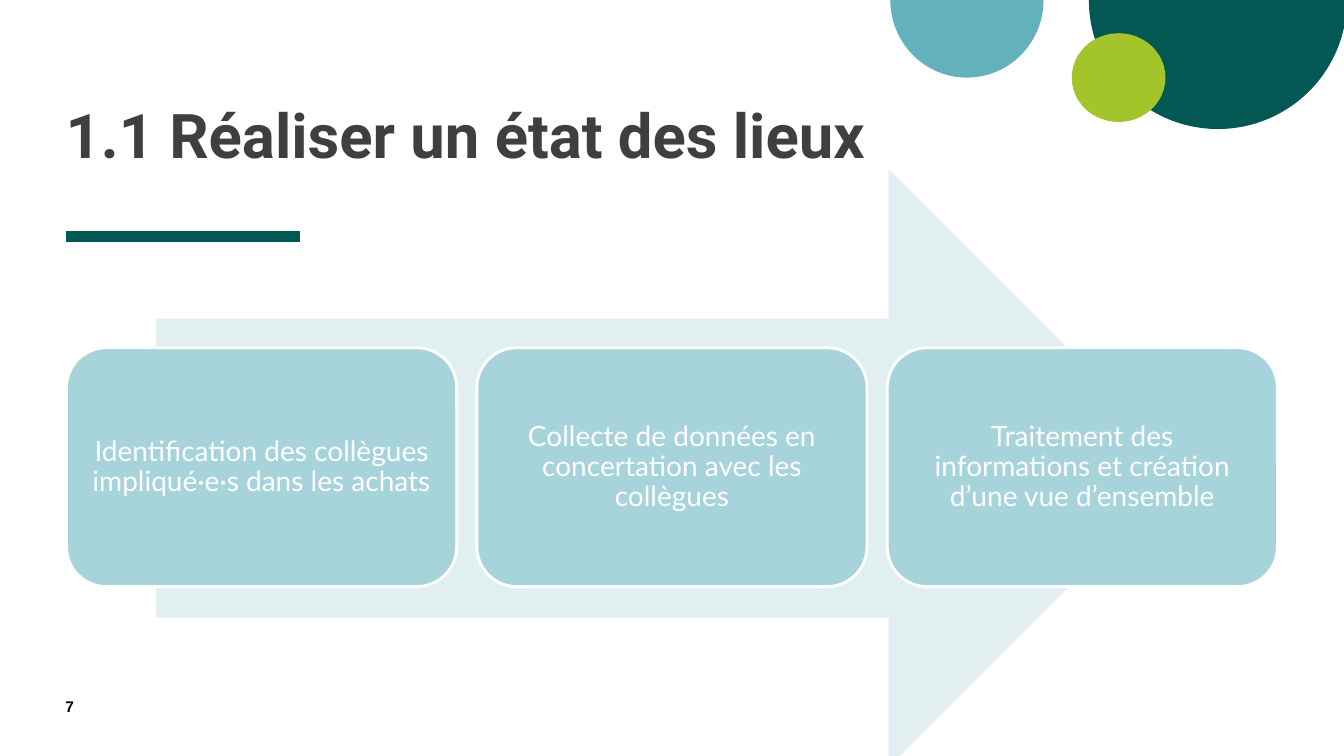
import dataclasses

import lxml.etree
import pptx
import pptx.dml.color
import pptx.enum.shapes
import pptx.enum.text
import pptx.oxml.ns
import pptx.shapes.autoshape
import pptx.slide
import pptx.text.text
import pptx.util

Inches = pptx.util.Inches
Kind = pptx.enum.shapes.MSO_SHAPE
Align = pptx.enum.text.PP_ALIGN
Anchor = pptx.enum.text.MSO_ANCHOR

COLOURS = {
    "green": "035854",
    "blue": "64B1BE",
    "lime": "A3C42A",
    "arrow": "E1EFF1",
    "card": "A7D3DA",
    "title": "3F3F3F",
    "black": "000000",
    "white": "FFFFFF",
}

STEPS = [
    "Identification des collègues impliqué·e·s dans les achats",
    "Collecte de données en concertation avec les collègues",
    "Traitement des informations et création d’une vue d’ensemble",
]
PITCH = 4.07


@dataclasses.dataclass
class Form:
    kind: Kind
    left: float
    top: float
    width: float
    height: float
    fill: str
    adjust: tuple[float, ...] = ()
    edge: str | None = None


# Pie angles of 0 and 180 degrees leave the lower half of the disc.
HALF = (0, 108)
DECOR = [
    Form(Kind.PIE, 10.8, -1.28, 2.56, 2.56, "green", HALF),
    Form(Kind.PIE, 8.83, -0.77, 1.52, 1.54, "blue", HALF),
    Form(Kind.OVAL, 10.63, 0.33, 0.93, 0.88, "lime"),
]
ARROW = Form(Kind.RIGHT_ARROW, 1.55, 1.68, 10.23, 5.93, "arrow", (0.5, 0.5))
CARDS = [
    Form(Kind.ROUNDED_RECTANGLE, 0.66 + PITCH * i, 3.45, 3.87, 2.37,
         "card", (0.167,), "white")
    for i in range(len(STEPS))
]


def colour(name: str) -> pptx.dml.color.RGBColor:
    return pptx.dml.color.RGBColor.from_string(COLOURS[name])


def write(frame: pptx.text.text.TextFrame, text: str, *, font: str,
          size: float, ink: str, bold: bool = False,
          align: Align = Align.LEFT, anchor: Anchor = Anchor.TOP,
          spacing: float = 1.0, inset: float = 0) -> None:
    frame.word_wrap = True
    frame.auto_size = pptx.enum.text.MSO_AUTO_SIZE.NONE
    frame.vertical_anchor = anchor
    frame.margin_left = frame.margin_right = Inches(inset)
    frame.margin_top = frame.margin_bottom = Inches(inset)
    para = frame.paragraphs[0]
    para.alignment = align
    para.line_spacing = spacing
    run = para.add_run()
    run.text = text
    run.font.name = font
    run.font.size = pptx.util.Pt(size)
    run.font.bold = bold
    run.font.color.rgb = colour(ink)


def draw(slide: pptx.slide.Slide, form: Form) -> pptx.shapes.autoshape.Shape:
    shape = slide.shapes.add_shape(
        form.kind, Inches(form.left), Inches(form.top),
        Inches(form.width), Inches(form.height))
    shape.shadow.inherit = False
    shape.fill.solid()
    shape.fill.fore_color.rgb = colour(form.fill)
    for i, value in enumerate(form.adjust):
        shape.adjustments[i] = value
    if form.edge:
        shape.line.color.rgb = colour(form.edge)
        shape.line.width = pptx.util.Pt(2)
    else:
        shape.line.fill.background()
    return shape


def rule(slide: pptx.slide.Slide) -> None:
    """Draw the thick bar under the title."""
    line = slide.shapes.add_connector(
        pptx.enum.shapes.MSO_CONNECTOR.STRAIGHT,
        Inches(0.65), Inches(2.35), Inches(2.98), Inches(2.35))
    line.line.color.rgb = colour("green")
    line.line.width = pptx.util.Pt(8)
    props = line._element.spPr
    lxml.etree.SubElement(props, pptx.oxml.ns.qn("a:effectLst"))


def head(slide: pptx.slide.Slide) -> None:
    title = slide.shapes.title
    title.left, title.top = Inches(0.65), Inches(-0.05)
    title.width, title.height = Inches(8.58), Inches(1.74)
    write(title.text_frame, "1.1 Réaliser un état des lieux", font="Roboto",
          size=44, ink="title", bold=True, anchor=Anchor.BOTTOM, spacing=0.8)


def main() -> None:
    deck = pptx.Presentation()
    deck.slide_width, deck.slide_height = Inches(13.33), Inches(7.5)
    slide = deck.slides.add_slide(deck.slide_layouts.get_by_name("Title Only"))

    for form in DECOR:
        draw(slide, form)
    rule(slide)
    head(slide)

    page = slide.shapes.add_textbox(
        Inches(0.65), Inches(6.92), Inches(0.57), Inches(0.27))
    write(page.text_frame, "7", font="Arial", size=11, ink="black", bold=True)

    draw(slide, ARROW)
    for form, text in zip(CARDS, STEPS):
        card = draw(slide, form)
        write(card.text_frame, text, font="Lato", size=20, ink="white",
              align=Align.CENTER, anchor=Anchor.MIDDLE, spacing=0.9,
              inset=0.13)

    deck.save("out.pptx")


if __name__ == "__main__":
    main()
